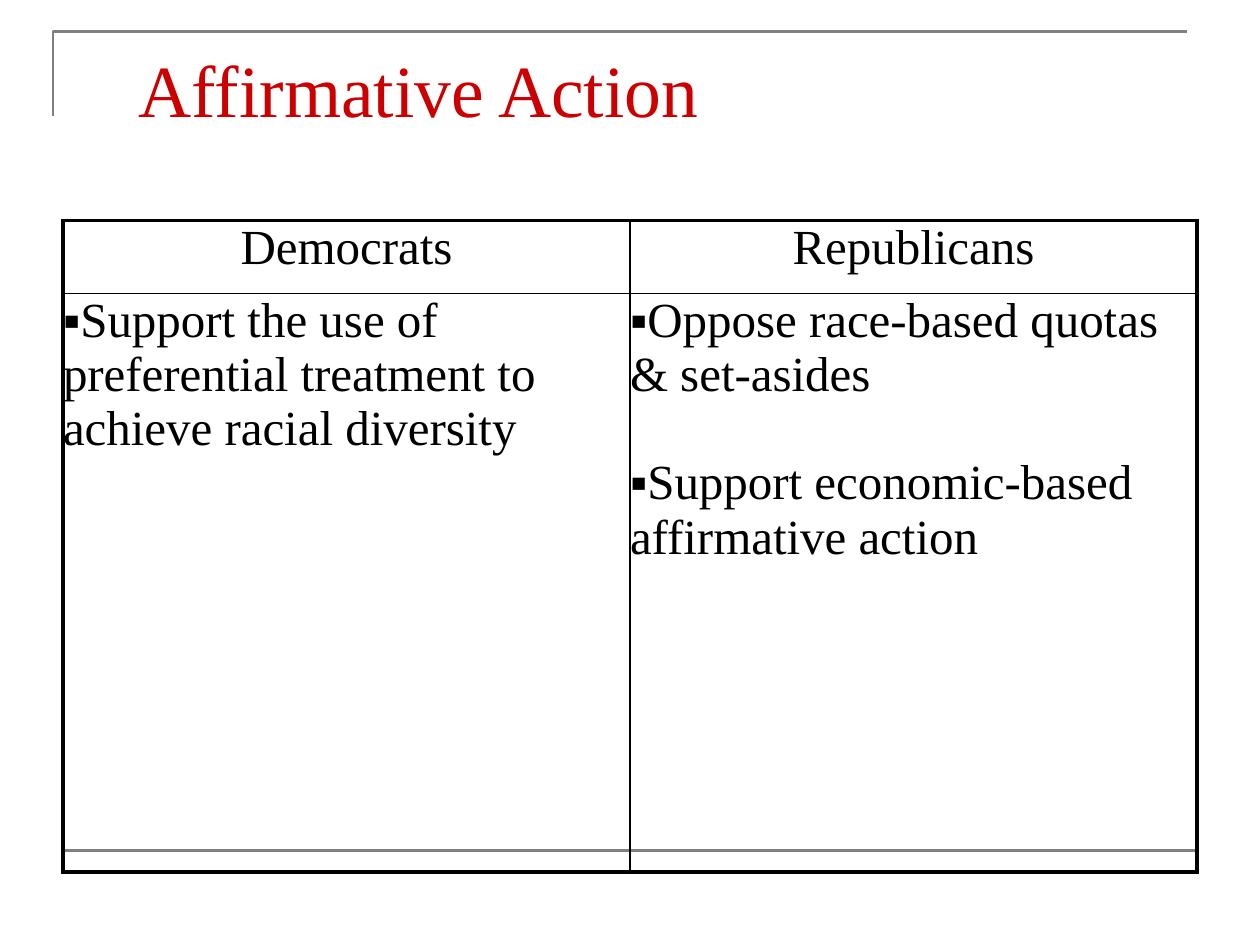
from dataclasses import dataclass

from lxml.etree import SubElement
from pptx import Presentation
from pptx.dml.color import RGBColor
from pptx.enum.shapes import MSO_CONNECTOR
from pptx.enum.text import MSO_ANCHOR, PP_ALIGN
from pptx.oxml import parse_xml
from pptx.oxml.ns import nsdecls, qn
from pptx.util import Inches, Pt

COLORS = {"rule": "808080", "title": "CC0000", "ink": "000000"}
FONT = "Times New Roman"
SLIDE_WIDTH, SLIDE_HEIGHT = Inches(10), Inches(7.5)
MARGIN = 0.05
BODY_SIZE = 28
LINE_GAP = 31
OUTER_BORDER, INNER_BORDER = 2.25, 1
ROW_HEIGHTS = (0.58, 4.59)


@dataclass(frozen=True)
class Party:
    name: str
    positions: tuple[str, ...]


PARTIES = (
    Party("Democrats", (
        "Support the use of preferential treatment to achieve racial diversity",)),
    Party("Republicans", (
        "Oppose race-based quotas & set-asides",
        "Support economic-based affirmative action")),
)


def across(share: float) -> int:
    return round(SLIDE_WIDTH * share)


def down(share: float) -> int:
    return round(SLIDE_HEIGHT * share)


def add_text(paragraph, text: str, size: float, color: str) -> None:
    run = paragraph.add_run()
    run.text = text
    run.font.size = Pt(size)
    run.font.name = FONT
    run.font.color.rgb = RGBColor.from_string(COLORS[color])


def style_rule(rule) -> None:
    rule.line.color.rgb = RGBColor.from_string(COLORS["rule"])
    rule.line.width = Pt(1.5)


def add_bullet(paragraph) -> None:
    props = paragraph._p.get_or_add_pPr()
    props.set("marL", "0")
    props.set("indent", "0")
    color = SubElement(props, qn("a:buClr"))
    SubElement(color, qn("a:srgbClr"), val=COLORS["ink"])
    SubElement(props, qn("a:buFont"), typeface=FONT)
    SubElement(props, qn("a:buChar"), char="▪")


def set_borders(cell, row: int, column: int) -> None:
    """Draw heavy lines on the table's outside and thin ones between cells."""
    outer = {"L": column == 0, "R": column == len(PARTIES) - 1,
             "T": row == 0, "B": row == len(ROW_HEIGHTS) - 1}
    for index, (side, is_outer) in enumerate(outer.items()):
        width = Pt(OUTER_BORDER if is_outer else INNER_BORDER)
        border = parse_xml(
            f'<a:ln{side} {nsdecls("a")} w="{width}"><a:solidFill>'
            f'<a:srgbClr val="{COLORS["ink"]}"/></a:solidFill></a:ln{side}>')
        cell._tc.get_or_add_tcPr().insert(index, border)


def add_frame(slide) -> None:
    builder = slide.shapes.build_freeform(Inches(0.42), Inches(0.92))
    builder.add_line_segments(
        [(Inches(0.42), Inches(0.25)), (Inches(9.42), Inches(0.25))], close=False)
    corner = builder.convert_to_shape()
    corner.shadow.inherit = False
    corner.fill.background()
    style_rule(corner)

    footer = slide.shapes.add_connector(
        MSO_CONNECTOR.STRAIGHT, across(MARGIN), down(0.9), across(1 - MARGIN), down(0.9))
    style_rule(footer)
    SubElement(footer._element.spPr, qn("a:effectLst"))


def add_title(slide, text: str) -> None:
    title = slide.shapes.title
    title.left, title.top = across(0.1), down(0.04)
    title.width, title.height = across(0.85), Inches(1.25)
    title.text_frame.vertical_anchor = MSO_ANCHOR.TOP
    paragraph = title.text_frame.paragraphs[0]
    paragraph.alignment = PP_ALIGN.LEFT
    add_text(paragraph, text, 42, "title")


def fill_cell(cell, texts: tuple[str, ...], is_header: bool) -> None:
    cell.fill.background()
    cell.margin_left = cell.margin_right = cell.margin_top = cell.margin_bottom = 0
    frame = cell.text_frame
    for index, text in enumerate(texts):
        paragraph = frame.add_paragraph() if index else frame.paragraphs[0]
        paragraph.alignment = PP_ALIGN.CENTER if is_header else PP_ALIGN.LEFT
        if index:
            paragraph.space_before = Pt(LINE_GAP)
        if not is_header:
            add_bullet(paragraph)
        add_text(paragraph, text, BODY_SIZE, "ink")


def add_comparison(slide) -> None:
    table = slide.shapes.add_table(
        len(ROW_HEIGHTS), len(PARTIES), across(MARGIN), Inches(1.75),
        across(1 - 2 * MARGIN), Inches(sum(ROW_HEIGHTS))).table
    table.first_row = table.horz_banding = False
    for row, height in zip(table.rows, ROW_HEIGHTS):
        row.height = Inches(height)
    for column, party in enumerate(PARTIES):
        for row, texts in enumerate(((party.name,), party.positions)):
            cell = table.cell(row, column)
            fill_cell(cell, texts, is_header=row == 0)
            set_borders(cell, row, column)


def main() -> None:
    deck = Presentation()
    deck.slide_width, deck.slide_height = SLIDE_WIDTH, SLIDE_HEIGHT
    slide = deck.slides.add_slide(deck.slide_layouts[5])
    add_frame(slide)
    add_title(slide, "Affirmative Action")
    add_comparison(slide)
    deck.save("out.pptx")


if __name__ == "__main__":
    main()
